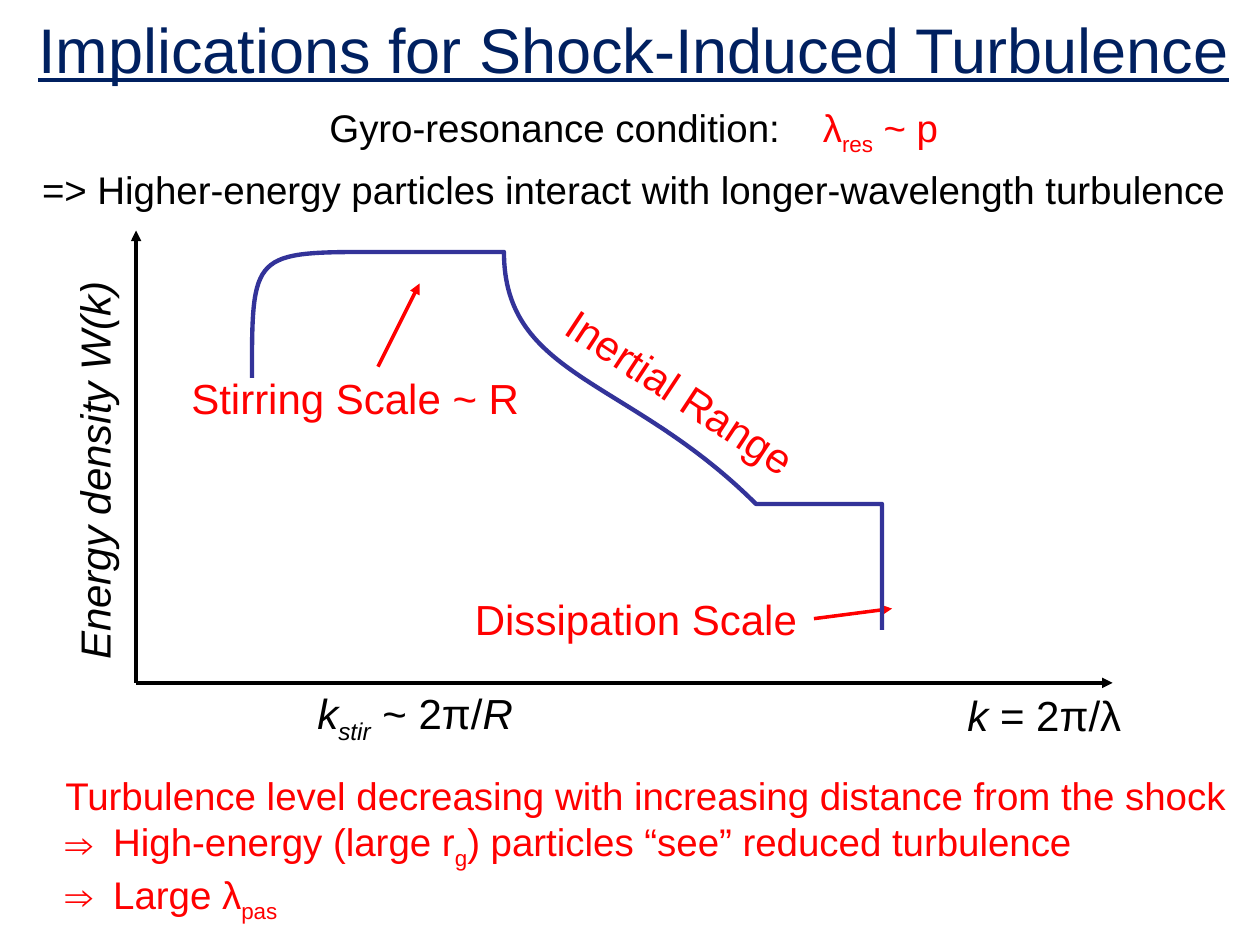
import pptx
import pptx.dml.color
import pptx.enum.shapes
import pptx.enum.text
import pptx.oxml
import pptx.oxml.ns
import pptx.util

Inches = pptx.util.Inches
Pt = pptx.util.Pt

THEME = {
    "font": "Arial",
    "title": "002060", "text": "000000", "accent": "FF0000", "curve": "333399",
    "title_size": 36, "body_size": 22, "label_size": 24,
    "line_width": 2, "curve_width": 2.5,
}

# Content: a paragraph is a list of (text, run format) pairs
TITLE = [[("Implications for Shock-Induced Turbulence", {"underline": True})]]
CONDITION = [
    [("Gyro-resonance condition:", {}), (" ", {"spacing": 18.3}),
     ("λ", {"color": "accent"}), ("res", {"color": "accent", "sub": True}),
     (" ~ p", {"color": "accent"})],
    [("=> Higher-energy particles interact with longer-wavelength turbulence", {})],
]
CONCLUSION = [
    [("Turbulence level decreasing with increasing distance from the shock", {})],
    [("High-energy (large r", {}), ("g", {"sub": True}),
     (") particles “see” reduced turbulence", {})],
    [("Large λ", {}), ("pas", {"sub": True})],
]
ITALIC = {"italic": True}

# Diagram labels: runs, left, top, width, colour, rotation
LABELS = [
    ([("k", ITALIC), (" = 2π/λ", {})], 7.58, 5.42, 1.58, "text", 0),
    ([("Energy density W(k)", ITALIC)], -1.13, 3.21, 3.75, "text", 270),
    ([("k", ITALIC), ("stir", {"italic": True, "sub": True}), (" ~ 2π/", {}),
      ("R", ITALIC)], 2.42, 5.41, 1.9, "text", 0),
    ([("Stirring Scale ~ R", {})], 1.42, 2.91, 2.92, "accent", 0),
    ([("Dissipation Scale", {})], 3.67, 4.66, 2.92, "accent", 0),
    ([("Inertial Range", {})], 4.26, 2.88, 2.36, "accent", 33.4),
]
LABEL_HEIGHT = 0.5

# Arrows: start, end, colour
ORIGIN = (1.08, 5.42)
ARROWS = [
    (ORIGIN, (1.08, 1.83), "text"),
    (ORIGIN, (8.83, 5.42), "text"),
    ((3, 2.91), (3.33, 2.25), "accent"),
    ((6.46, 4.91), (7.08, 4.83), "accent"),
]

# Spectrum: start point, then two control points and an end point per segment
SPECTRUM_START = (1.75, 2.89)
SPECTRUM_SEGMENTS = [
    [(2.07, 2.49), (2.14, 2.45), (2.57, 2.21)],
    [(2.87, 2.09), (3.08, 2.03), (3.37, 2.14)],
    [(3.67, 2.25), (3.55, 2.22), (3.97, 2.49)],
    [(4.39, 2.75), (5.38, 3.41), (5.87, 3.74)],
    [(6.35, 4.07), (6.63, 4.25), (6.87, 4.47)],
    [(7.1, 4.69), (7.18, 4.9), (7.25, 5.05)],
    [(7.33, 5.2), (7.32, 5.28), (7.31, 5.37)],
]


def theme_color(name):
    return pptx.dml.color.RGBColor.from_string(THEME[name])


def add_element(parent, tag, **attributes):
    element = parent.makeelement(pptx.oxml.ns.qn(tag), attributes)
    parent.append(element)
    return element


def add_bullet(paragraph, character, indent):
    properties = paragraph._p.get_or_add_pPr()
    properties.set("marL", str(Inches(indent)))
    properties.set("indent", str(-Inches(indent)))
    add_element(properties, "a:buFont", typeface=THEME["font"])
    add_element(properties, "a:buChar", char=character)


def add_text(slide, paragraphs, box, size="label_size", color="text", rotation=0,
             centered=False, middle=False, grow=True, space_before=0, bullet=None):
    shape = slide.shapes.add_textbox(*[Inches(value) for value in box])
    shape.rotation = rotation
    frame = shape.text_frame
    frame.word_wrap = True
    if grow:
        frame.auto_size = pptx.enum.text.MSO_AUTO_SIZE.SHAPE_TO_FIT_TEXT
    if middle:
        frame.vertical_anchor = pptx.enum.text.MSO_ANCHOR.MIDDLE
    for index, runs in enumerate(paragraphs):
        paragraph = frame.add_paragraph() if index else frame.paragraphs[0]
        if centered:
            paragraph.alignment = pptx.enum.text.PP_ALIGN.CENTER
        if index and space_before:
            paragraph.space_before = Pt(space_before)
        if index and bullet:
            add_bullet(paragraph, bullet, 0.38)
        for text, style in runs:
            run = paragraph.add_run()
            run.text = text
            run.font.name = THEME["font"]
            run.font.size = Pt(THEME[size])
            run.font.color.rgb = theme_color(style.get("color", color))
            run.font.italic = style.get("italic", False)
            run.font.underline = style.get("underline", False)
            properties = run._r.get_or_add_rPr()
            if style.get("sub"):
                properties.set("baseline", "-25000")
            if "spacing" in style:
                properties.set("spc", str(round(style["spacing"] * 100)))
    return shape


def add_arrow(slide, start, end, color):
    points = [Inches(value) for value in start + end]
    arrow = slide.shapes.add_connector(
        pptx.enum.shapes.MSO_CONNECTOR.STRAIGHT, *points)
    arrow.line.color.rgb = theme_color(color)
    arrow.line.width = Pt(THEME["line_width"])
    add_element(arrow.line._get_or_add_ln(), "a:tailEnd", type="triangle")
    add_element(arrow._element.spPr, "a:effectLst")


def add_curve(slide, start, segments):
    """Build an outline through all points, then join each three as a Bézier."""
    builder = slide.shapes.build_freeform(*start, scale=Inches(1))
    builder.add_line_segments(
        [point for segment in segments for point in segment], close=False)
    shape = builder.convert_to_shape()
    shape.shadow.inherit = False
    shape.fill.background()
    shape.line.color.rgb = theme_color("curve")
    shape.line.width = Pt(THEME["curve_width"])
    lines = list(shape._element.iter(pptx.oxml.ns.qn("a:lnTo")))
    outline = lines[0].getparent()
    for first in range(0, len(lines), 3):
        bezier = add_element(outline, "a:cubicBezTo")
        for line in lines[first:first + 3]:
            bezier.append(line[0])
            outline.remove(line)


def main():
    presentation = pptx.Presentation()
    presentation.slide_width = Inches(10)
    presentation.slide_height = Inches(7.5)
    slide = presentation.slides.add_slide(presentation.slide_layouts[6])

    # Heading and resonance condition
    add_text(slide, TITLE, (0.03, 0.08, 10, 0.6), size="title_size", color="title",
             centered=True, middle=True, grow=False)
    add_text(slide, CONDITION, (0.03, 0.78, 10, 1.04), size="body_size",
             centered=True, grow=False, space_before=5)

    # Turbulence spectrum diagram
    for start, end, color in ARROWS:
        add_arrow(slide, start, end, color)
    add_curve(slide, SPECTRUM_START, SPECTRUM_SEGMENTS)
    for runs, left, top, width, color, rotation in LABELS:
        add_text(slide, [runs], (left, top, width, LABEL_HEIGHT),
                 color=color, rotation=rotation)

    # Conclusion
    add_text(slide, CONCLUSION, (0.42, 6.08, 9.58, 1.21), size="body_size",
             color="accent", bullet="⇒")

    presentation.save("out.pptx")


if __name__ == "__main__":
    main()
